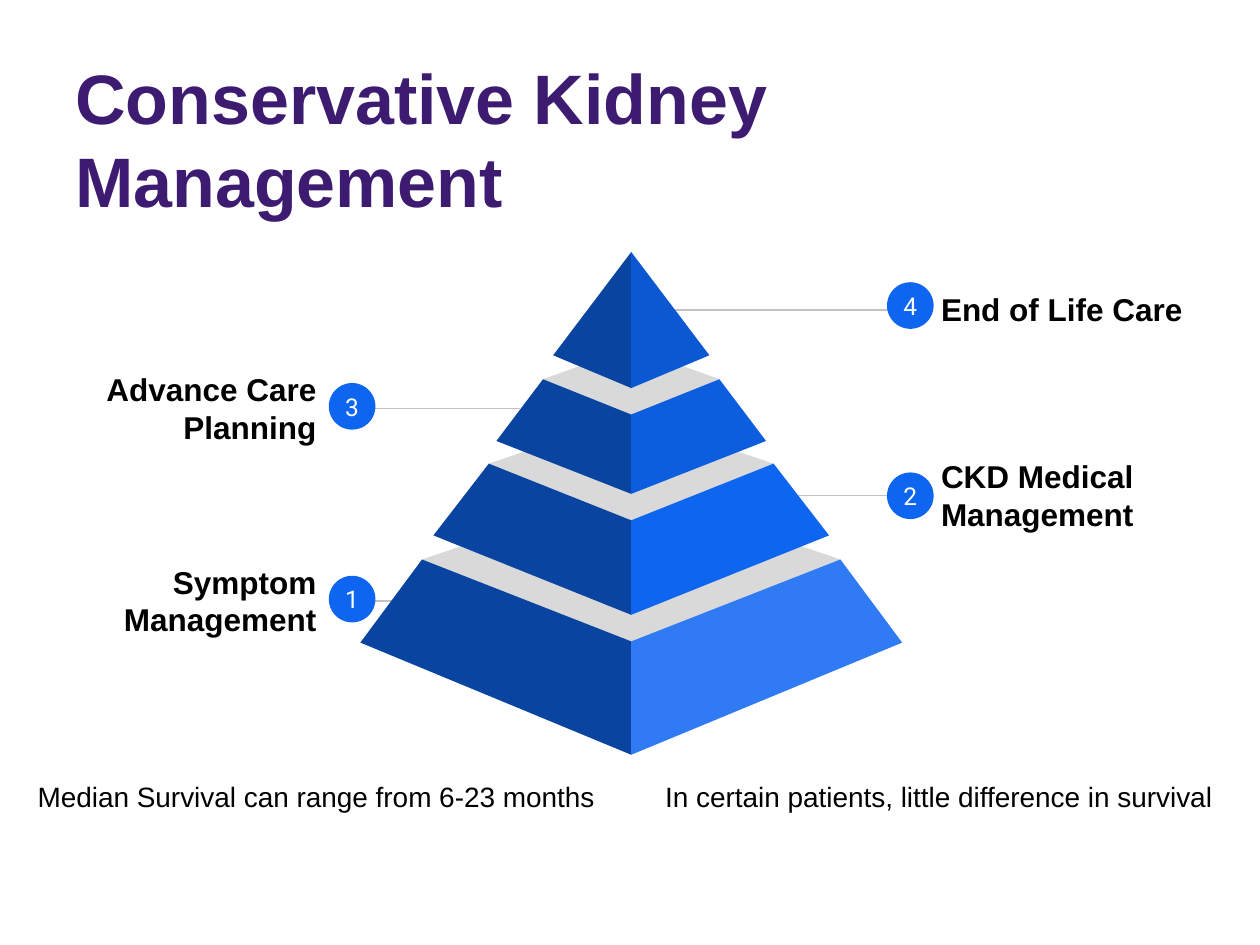
from dataclasses import dataclass

from lxml import etree
from pptx import Presentation
from pptx.dml.color import RGBColor
from pptx.enum.shapes import MSO_CONNECTOR, MSO_SHAPE
from pptx.enum.text import MSO_ANCHOR, PP_ALIGN
from pptx.oxml.ns import qn
from pptx.util import Inches, Pt

LINE = MSO_CONNECTOR.STRAIGHT
OVAL = MSO_SHAPE.OVAL
TOP, MIDDLE = MSO_ANCHOR.TOP, MSO_ANCHOR.MIDDLE
LEFT, CENTER, RIGHT = PP_ALIGN.LEFT, PP_ALIGN.CENTER, PP_ALIGN.RIGHT


def rgb(code):
    """Return the colour for a hex code."""
    return RGBColor.from_string(code)


@dataclass(frozen=True)
class Theme:
    """Hold the colours and text formats of the slide."""
    lid = rgb("D9D9D9")
    dark = rgb("0944A1")
    badge = rgb("0E65F0")
    rule = rgb("C2C2C2")
    title = dict(name="Arial", size=Pt(40), bold=True, color=rgb("3C1B71"))
    label = dict(name="Arial", size=Pt(18), bold=True, color=rgb("000000"))
    number = dict(name="Roboto", size=Pt(14), bold=False, color=rgb("FFFFFF"))
    note = dict(name="Arial", size=Pt(16), bold=False, color=rgb("000000"))


THEME = Theme()

LEVELS = [
    (0, 0, 0, 0.62, 0.82, 1.08, None, rgb("0C58D3")),
    (0.7, 1.01, 1.29, 1.07, 1.5, 1.92, 0.76, rgb("0D5DDF")),
    (1.13, 1.68, 2.13, 1.57, 2.25, 2.88, 1.3, rgb("0E65F0")),
    (1.66, 2.44, 3.09, 2.15, 3.1, 3.99, 1.88, rgb("307BF3")),
]

CALLOUTS = [
    ("1", "Symptom Management", (0.06, 4.12, 2.55, 1.29), 0.45, 4.13),
    ("2", "CKD Medical Management", (7.37, 3.28, 2.55, 1.29), 0.47, 6.31),
    ("3", "Advance Care Planning", (0.06, 2.59, 2.55, 1.29), 0.45, 4.13),
    ("4", "End of Life Care", (7.37, 1.81, 2.55, 1.29), 0.43, 5.34),
]


def write(shape, text, style, align, anchor, pad):
    """Put one formatted paragraph in a shape."""
    frame = shape.text_frame
    side, edge = (Inches(gap) for gap in pad)
    layout = dict(word_wrap=True, vertical_anchor=anchor,
                  margin_left=side, margin_right=side,
                  margin_top=edge, margin_bottom=edge)
    for key, value in layout.items():
        setattr(frame, key, value)
    para = frame.paragraphs[0]
    para.alignment = align
    run = para.add_run()
    run.text = text
    for key, value in style.items():
        if key == "color":
            run.font.color.rgb = value
        else:
            setattr(run.font, key, value)


def add_text(slide, box, text, style, align=LEFT, anchor=TOP, pad=(0.1, 0.1)):
    """Add a text box."""
    shape = slide.shapes.add_textbox(*map(Inches, box))
    write(shape, text, style, align, anchor, pad)


def paint(shape, color):
    """Give a shape a plain fill with no line or shadow."""
    shape.shadow.inherit = False
    shape.fill.solid()
    shape.fill.fore_color.rgb = color
    shape.line.fill.background()


def add_face(slide, points, color):
    """Add a closed polygon."""
    spots = [(Inches(x), Inches(y)) for x, y in points]
    pen = slide.shapes.build_freeform(*spots[0])
    pen.add_line_segments(spots[1:], close=True)
    paint(pen.convert_to_shape(), color)


def add_tower(slide, box):
    """Stack the pyramid levels in a box, with the lids behind the faces."""
    left, top, width, _ = box
    mid = left + width / 2
    for half, rim, nose, *_, back, _ in LEVELS:
        if back is not None:
            add_face(slide, [(mid - half, top + rim), (mid, top + nose),
                             (mid + half, top + rim), (mid, top + back)],
                     THEME.lid)
    for half, rim, nose, base, foot, tip, _, tint in LEVELS:
        for sign, color in ((-1, THEME.dark), (1, tint)):
            add_face(slide, [(mid + sign * half, top + rim), (mid, top + nose),
                             (mid, top + tip),
                             (mid + sign * base, top + foot)], color)


def add_callout(slide, box, number, text, drop, reach):
    """Add a label, its numbered badge and a rule towards the pyramid."""
    left, top, width, _ = box
    size = 0.37
    west = left + width < reach
    x = left + width if west else left - 0.33
    add_text(slide, box, text, THEME.label, RIGHT if west else LEFT, MIDDLE)

    y = Inches(top + 0.65)
    rule = slide.shapes.add_connector(
        LINE, Inches(reach), y, Inches(x + size / 2), y)
    rule.line.color.rgb = THEME.rule
    rule.line.width = Pt(0.75)
    etree.SubElement(rule._element.spPr, qn("a:effectLst"))

    badge = slide.shapes.add_shape(
        OVAL, *map(Inches, (x, top + drop, size, size)))
    paint(badge, THEME.badge)
    write(badge, number, THEME.number, CENTER, MIDDLE, (0, 0))


def add_notes(slide, box):
    """Set the two closing remarks side by side in a box."""
    left, top, width, height = box
    start = 4.98
    add_text(slide, (left, top, 4.8, height),
             "Median Survival can range from 6-23 months", THEME.note)
    add_text(slide, (left + start, top, width - start, height),
             "In certain patients, little difference in survival", THEME.note)


def main():
    """Build and save the slide."""
    deck = Presentation()
    deck.slide_width, deck.slide_height = Inches(10), Inches(7.5)
    slide = deck.slides.add_slide(deck.slide_layouts[6])
    add_text(slide, (0.5, 0.47, 9, 1.25), "Conservative Kidney Management",
             THEME.title, anchor=MIDDLE, pad=(0.1, 0.05))
    for number, text, box, drop, reach in CALLOUTS:
        add_callout(slide, box, number, text, drop, reach)
    add_tower(slide, (2.86, 2, 4.3, 3.99))
    add_notes(slide, (0.2, 6.09, 9.6, 0.59))
    deck.save("out.pptx")


if __name__ == "__main__":
    main()
